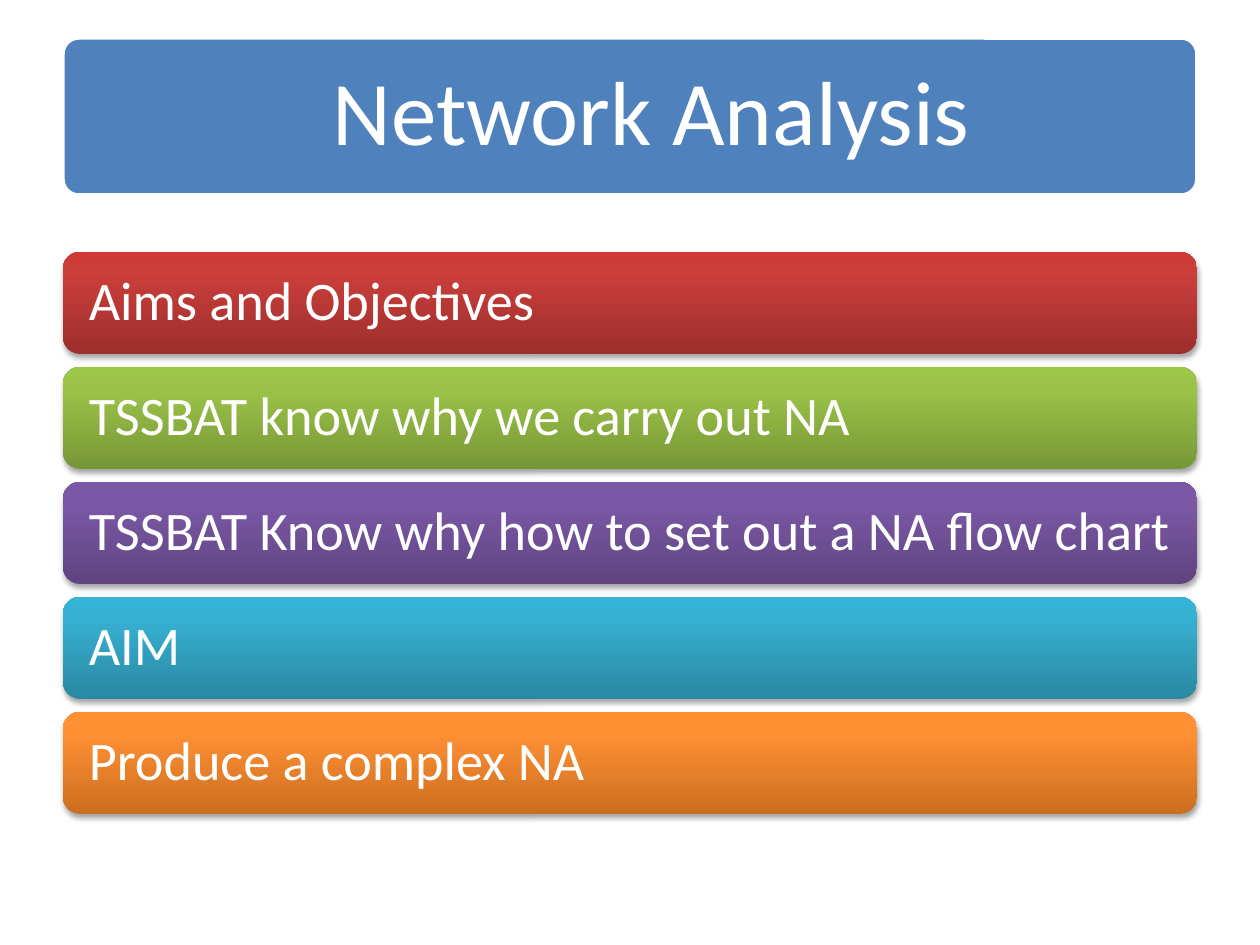
from pptx import Presentation
from pptx import util as u
from pptx.dml.color import RGBColor
from pptx.enum import shapes, text
from pptx.oxml import parse_xml
from pptx.oxml.ns import nsdecls, qn

TITLE = "Network Analysis"
BARS = [
    ("Aims and Objectives", ("9C2F2D", "CB3E3A", "CE3B37")),
    ("TSSBAT know why we carry out NA", ("779737", "9BC348", "9DC746")),
    ("TSSBAT Know why how to set out a NA flow chart", ("5F4480", "7B58A6", "7C57A8")),
    ("AIM", ("2A88A2", "37B1D2", "34B4D6")),
    ("Produce a complex NA", ("CC6E20", "FF9034", "FF9136")),
]
STOPS = (0, 80, 100)
LEFT, WIDE = 63, 1134
HEAD_TOP, HEAD_HIGH = 38, 157
HEAD_LEFT, HEAD_WIDE, HEAD_PAD = 305, 891, 28
BAR_TOP, BAR_HIGH, GAP, BAR_PAD = 252, 102, 13, 21


def px(n):
    return u.Emu(round(n * 914400 / 126))


def color(code):
    return RGBColor.from_string(code)


def panel(slide, top, high):
    shape = slide.shapes.add_shape(
        shapes.MSO_SHAPE.ROUNDED_RECTANGLE, px(LEFT), px(top), px(WIDE), px(high))
    shape.shadow.inherit = False
    return shape


def write(shape, words, size, pad):
    frame = shape.text_frame
    frame.text = words
    frame.word_wrap = True
    frame.auto_size = text.MSO_AUTO_SIZE.NONE
    frame.vertical_anchor = text.MSO_ANCHOR.MIDDLE
    frame.margin_left = frame.margin_right = px(pad)
    frame.margin_top = frame.margin_bottom = px(pad)
    para = frame.paragraphs[0]
    para.alignment = text.PP_ALIGN.LEFT
    para.line_spacing = 0.9
    font = para.runs[0].font
    font.name, font.size = "Calibri", u.Pt(size)
    font.color.rgb = color("FFFFFF")


def shade(bar, codes):
    bar.fill.gradient()
    bar.line.fill.background()
    stops = "".join(
        f'<a:gs pos="{pos * 1000}"><a:srgbClr val="{code}"/></a:gs>'
        for pos, code in zip(STOPS, codes))
    props = bar._element.spPr
    props.replace(props.find(qn("a:gradFill")), parse_xml(
        f'<a:gradFill {nsdecls("a")} rotWithShape="1"><a:gsLst>{stops}</a:gsLst>'
        '<a:lin ang="16200000" scaled="0"/></a:gradFill>'))
    props.find(qn("a:effectLst")).append(parse_xml(
        f'<a:outerShdw {nsdecls("a")} blurRad="40000" dist="23000" dir="5400000" '
        'rotWithShape="0"><a:srgbClr val="000000"><a:alpha val="35000"/>'
        '</a:srgbClr></a:outerShdw>'))


def main():
    deck = Presentation()
    deck.slide_width, deck.slide_height = px(1260), px(945)
    slide = deck.slides.add_slide(deck.slide_layouts[5])

    banner = panel(slide, HEAD_TOP, HEAD_HIGH)
    banner.adjustments[0] = 0.1
    banner.fill.solid()
    banner.fill.fore_color.rgb = color("4F81BD")
    banner.line.color.rgb = color("FFFFFF")
    banner.line.width = u.Pt(2)

    title = slide.shapes.title
    title.left, title.top = px(HEAD_LEFT), px(HEAD_TOP)
    title.width, title.height = px(HEAD_WIDE), px(HEAD_HIGH)
    write(title, TITLE, 52, HEAD_PAD)
    banner._element.addnext(title._element)

    for i, (words, codes) in enumerate(BARS):
        bar = panel(slide, BAR_TOP + i * (BAR_HIGH + GAP), BAR_HIGH)
        shade(bar, codes)
        write(bar, words, 31, BAR_PAD)

    deck.save("out.pptx")


if __name__ == "__main__":
    main()
